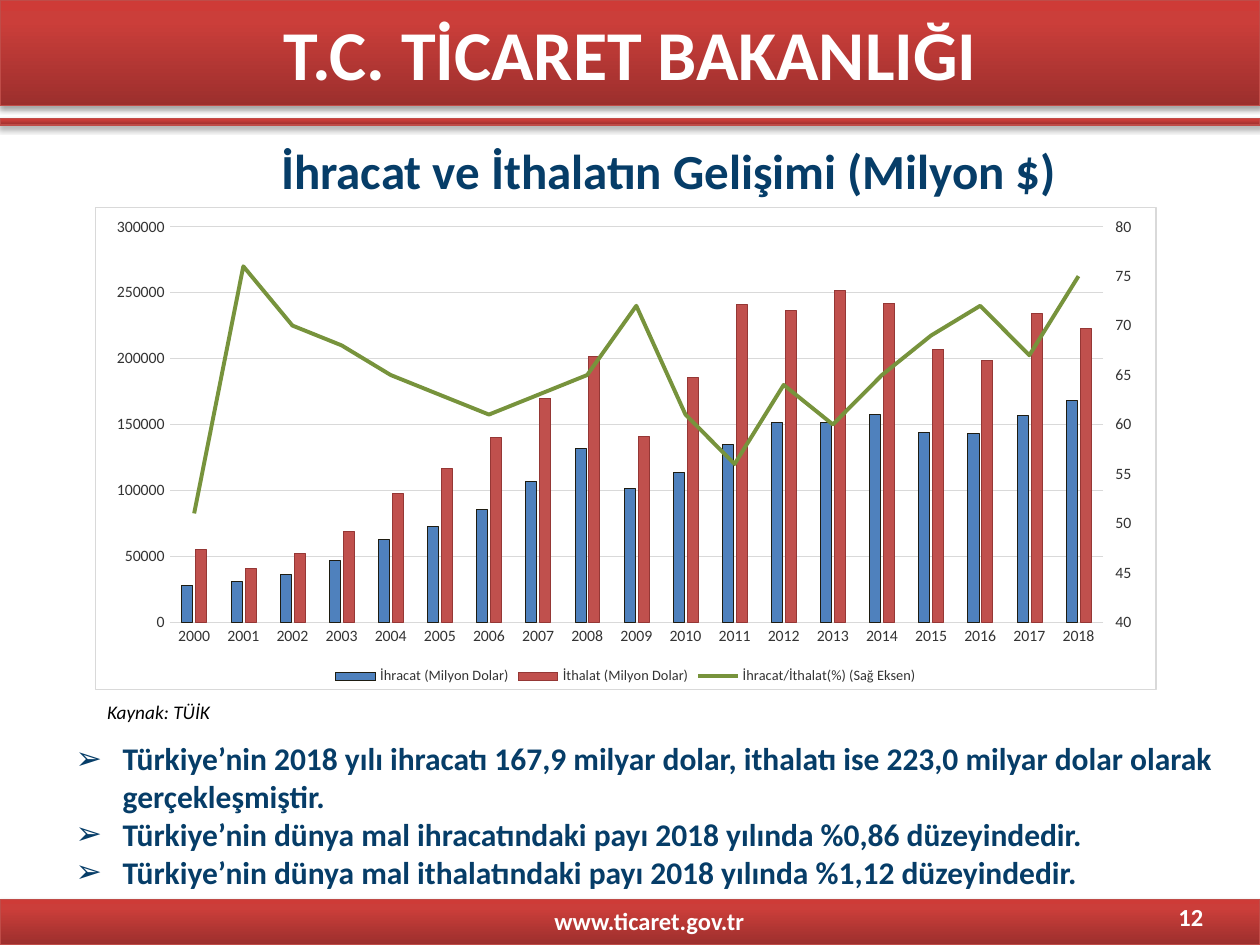
from copy import deepcopy
from dataclasses import dataclass

from lxml.etree import SubElement
from pptx import Presentation
from pptx.chart.axis import ValueAxis
from pptx.chart.data import CategoryChartData
from pptx.dml.color import RGBColor
from pptx.enum.chart import XL_CHART_TYPE, XL_LEGEND_POSITION, XL_MARKER_STYLE, XL_TICK_MARK
from pptx.enum.shapes import MSO_SHAPE
from pptx.enum.text import MSO_ANCHOR, MSO_AUTO_SIZE, PP_ALIGN
from pptx.oxml import parse_xml
from pptx.oxml.ns import nsdecls, qn
from pptx.util import Cm, Pt


@dataclass(frozen=True)
class Theme:
    """Colours, font and type sizes of the slide."""
    font: str = "Calibri"
    white: str = "FFFFFF"
    black: str = "000000"
    navy: str = "063D68"
    band_stops: tuple = ((0, "9C2F2D"), (0.8, "CB3E3A"), (1, "CE3B37"))
    band_line: str = "BF4C48"
    axis_text: str = "333333"
    grid: str = "D9D9D9"
    exports: tuple = ("4F81BD", "1E1C11")
    imports: tuple = ("C0504D", "953735")
    ratio: str = "77933C"
    banner_size: float = 40
    title_size: float = 28
    body_size: float = 18
    footer_size: float = 14
    source_size: float = 11
    axis_size: float = 9
    legend_size: float = 8.2


THEME = Theme()
YEARS = [str(year) for year in range(2000, 2019)]
EXPORTS = [28000, 31000, 36000, 47000, 63000, 73000, 86000, 107000, 132000, 102000,
           114000, 135000, 152000, 152000, 158000, 144000, 143000, 157000, 168000]
IMPORTS = [55000, 41000, 52000, 69000, 98000, 117000, 140000, 170000, 202000, 141000,
           186000, 241000, 237000, 252000, 242000, 207000, 199000, 234000, 223000]
RATIOS = [51, 76, 70, 68, 65, 63, 61, 63, 65, 72, 61, 56, 64, 60, 65, 69, 72, 67, 75]
FINDINGS = [
    "Türkiye’nin 2018 yılı ihracatı 167,9 milyar dolar, ithalatı ise 223,0 milyar dolar "
    "olarak gerçekleşmiştir.",
    "Türkiye’nin dünya mal ihracatındaki payı 2018 yılında %0,86 düzeyindedir.",
    "Türkiye’nin dünya mal ithalatındaki payı 2018 yılında %1,12 düzeyindedir.",
]


def rgb(value):
    """Turn a hex string into a colour."""
    return RGBColor.from_string(value)


def style_font(font, size, color, bold=False, italic=False):
    """Apply the theme font with a size, colour and weight."""
    font.name, font.size, font.bold, font.italic = THEME.font, Pt(size), bold, italic
    font.color.rgb = rgb(color)


def style_line(line, color, width):
    """Give a line its colour and width in points."""
    line.color.rgb = rgb(color)
    line.width = Pt(width)


def place(shape, left, top, width, height):
    """Move and size a shape in centimetres."""
    shape.left, shape.top, shape.width, shape.height = map(Cm, (left, top, width, height))


def write(shape, text, size, color, align=PP_ALIGN.LEFT, anchor=MSO_ANCHOR.MIDDLE,
          bold=True, italic=False):
    """Fill a shape with one formatted paragraph."""
    frame = shape.text_frame
    frame.text = text
    frame.word_wrap, frame.auto_size = True, MSO_AUTO_SIZE.NONE
    frame.vertical_anchor = anchor
    frame.paragraphs[0].alignment = align
    style_font(frame.paragraphs[0].runs[0].font, size, color, bold, italic)


def add_band(slide, top, height):
    """Add a full-width red gradient band with a soft shadow."""
    band = slide.shapes.add_shape(MSO_SHAPE.RECTANGLE, 0, Cm(top), Cm(25.4), Cm(height))
    band.fill.gradient()
    band.fill.gradient_angle = 90
    stop_list = band.element.spPr.find(".//" + qn("a:gsLst"))
    stop_list.append(deepcopy(stop_list[0]))
    for stop, (position, color) in zip(band.fill.gradient_stops, THEME.band_stops):
        stop.position = position
        stop.color.rgb = rgb(color)
    style_line(band.line, THEME.band_line, 0.75)
    band.shadow.inherit = False
    band.element.spPr.find(qn("a:effectLst")).append(parse_xml(
        f'<a:outerShdw {nsdecls("a")} blurRad="{Pt(3.1)}" dist="{Pt(1.8)}" dir="5400000" '
        f'rotWithShape="0"><a:srgbClr val="{THEME.black}"><a:alpha val="35000"/>'
        '</a:srgbClr></a:outerShdw>'))
    return band


def add_label(slide, box, text, size, color, **style):
    """Add a one-line text box."""
    write(slide.shapes.add_textbox(*map(Cm, box)), text, size, color, **style)


def fill_findings(body):
    """Write the arrow-bulleted findings into the body placeholder."""
    place(body, 1.27, 14.78, 23.88, 3.3)
    frame = body.text_frame
    frame.text = "\n".join(FINDINGS)
    frame.auto_size, frame.vertical_anchor = MSO_AUTO_SIZE.NONE, MSO_ANCHOR.TOP
    for paragraph in frame.paragraphs:
        properties = paragraph._p.get_or_add_pPr()
        properties.set("marL", str(Cm(0.95)))
        properties.set("indent", str(-Cm(0.95)))
        SubElement(properties, qn("a:buChar")).set("char", "➢")
        paragraph.space_before = Pt(0)
        style_font(paragraph.font, THEME.body_size, THEME.navy, bold=True)
        style_font(paragraph.runs[0].font, THEME.body_size, THEME.navy, bold=True)


def style_axis(axis):
    """Give an axis its small grey labels and no ticks."""
    style_font(axis.tick_labels.font, THEME.axis_size, THEME.axis_text)
    axis.major_tick_mark = axis.minor_tick_mark = XL_TICK_MARK.NONE


def set_scale(axis, low, high, step):
    """Fix the range and step of a value axis."""
    axis.minimum_scale, axis.maximum_scale, axis.major_unit = low, high, step


def move_ratio_to_right_axis(chart):
    """Turn the last series into a line on a second value axis."""
    bars = chart.plots[0]._element
    ratio = bars.findall(qn("c:ser"))[-1]
    for bar_setting in ratio.findall(qn("c:invertIfNegative")):
        ratio.remove(bar_setting)
    lines = parse_xml(
        f'<c:lineChart {nsdecls("c")}><c:grouping val="standard"/><c:varyColors val="0"/>'
        '<c:marker val="1"/><c:axId val="5001"/><c:axId val="5002"/></c:lineChart>')
    lines.insert(2, ratio)
    bars.addnext(lines)
    years = deepcopy(chart.category_axis._element)
    percents = deepcopy(chart.value_axis._element)
    chart.value_axis._element.addnext(percents)
    percents.addnext(years)
    for axis, own, other in ((years, "5001", "5002"), (percents, "5002", "5001")):
        axis.find(qn("c:axId")).set("val", own)
        axis.find(qn("c:crossAx")).set("val", other)
    years.find(qn("c:delete")).set("val", "1")
    percents.find(qn("c:axPos")).set("val", "r")
    percents.find(qn("c:crosses")).set("val", "max")
    right_axis = ValueAxis(percents)
    right_axis.has_major_gridlines = False
    right_axis.major_tick_mark = XL_TICK_MARK.OUTSIDE
    set_scale(right_axis, 40, 80, 5)


def frame_chart(chart):
    """Set the chart's background, border and plot position."""
    chart._chartSpace.find(qn("c:chart")).addnext(parse_xml(
        f'<c:spPr {nsdecls("c", "a")}><a:solidFill><a:srgbClr val="{THEME.white}"/></a:solidFill>'
        f'<a:ln w="{Pt(0.75)}"><a:solidFill><a:srgbClr val="{THEME.grid}"/></a:solidFill></a:ln>'
        '</c:spPr>'))
    plot_area = chart._chartSpace.find(".//" + qn("c:plotArea"))
    for layout in plot_area.findall(qn("c:layout")):
        plot_area.remove(layout)
    position = "".join(f'<c:{side} val="{share}"/>' for side, share in
                       (("x", 0.07), ("y", 0.04), ("w", 0.88), ("h", 0.82)))
    plot_area.insert(0, parse_xml(
        f'<c:layout {nsdecls("c")}><c:manualLayout><c:layoutTarget val="inner"/>'
        f'<c:xMode val="edge"/><c:yMode val="edge"/>{position}</c:manualLayout></c:layout>'))


def add_trade_chart(slide):
    """Add the export and import columns with the coverage ratio line."""
    data = CategoryChartData(number_format="0")
    data.categories = YEARS
    data.add_series("İhracat (Milyon Dolar)", EXPORTS)
    data.add_series("İthalat (Milyon Dolar)", IMPORTS)
    data.add_series("İhracat/İthalat(%) (Sağ Eksen)", RATIOS)
    chart = slide.shapes.add_chart(XL_CHART_TYPE.COLUMN_CLUSTERED, Cm(1.91), Cm(4.17),
                                   Cm(21.41), Cm(9.75), data).chart
    style_font(chart.font, 10, THEME.black)
    chart.has_title = False
    chart.has_legend = True
    chart.legend.position, chart.legend.include_in_layout = XL_LEGEND_POSITION.BOTTOM, False
    style_font(chart.legend.font, THEME.legend_size, THEME.axis_text)
    for axis in (chart.category_axis, chart.value_axis):
        style_axis(axis)
    style_line(chart.category_axis.format.line, THEME.grid, 0.75)
    chart.value_axis.format.line.fill.background()
    style_line(chart.value_axis.major_gridlines.format.line, THEME.grid, 0.75)
    set_scale(chart.value_axis, 0, 300000, 50000)
    move_ratio_to_right_axis(chart)
    columns, coverage = chart.plots
    columns.gap_width, columns.overlap, columns.vary_by_categories = 219, -27, False
    for series, (fill, outline) in zip(columns.series, (THEME.exports, THEME.imports)):
        series.format.fill.solid()
        series.format.fill.fore_color.rgb = rgb(fill)
        style_line(series.format.line, outline, 0.25)
    ratio = coverage.series[0]
    style_line(ratio.format.line, THEME.ratio, 2.25)
    ratio.marker.style, ratio.smooth = XL_MARKER_STYLE.NONE, False
    frame_chart(chart)


def main():
    """Build the slide and save it."""
    deck = Presentation()
    deck.slide_width, deck.slide_height = Cm(25.4), Cm(19.05)
    slide = deck.slides.add_slide(deck.slide_layouts[1])
    write(add_band(slide, 0, 2.13), "T.C. TİCARET BAKANLIĞI", THEME.banner_size, THEME.white,
          align=PP_ALIGN.CENTER)
    add_band(slide, 2.39, 0.13)
    add_band(slide, 18.13, 0.92)
    title, body = slide.placeholders
    place(title, 3.84, 2.77, 17.7, 1.32)
    write(title, "İhracat ve İthalatın Gelişimi (Milyon $)", THEME.title_size, THEME.navy,
          align=PP_ALIGN.RIGHT)
    add_trade_chart(slide)
    add_label(slide, (1.91, 14, 15.34, 0.74), "Kaynak: TÜİK", THEME.source_size, THEME.black,
              anchor=MSO_ANCHOR.TOP, bold=False, italic=True)
    fill_findings(body)
    add_label(slide, (10.13, 18.14, 5.92, 0.86), "www.ticaret.gov.tr", THEME.footer_size,
              THEME.white, align=PP_ALIGN.CENTER)
    add_label(slide, (18.59, 18.06, 5.92, 0.86), "12", THEME.footer_size, THEME.white,
              align=PP_ALIGN.RIGHT)
    deck.save("out.pptx")


if __name__ == "__main__":
    main()
